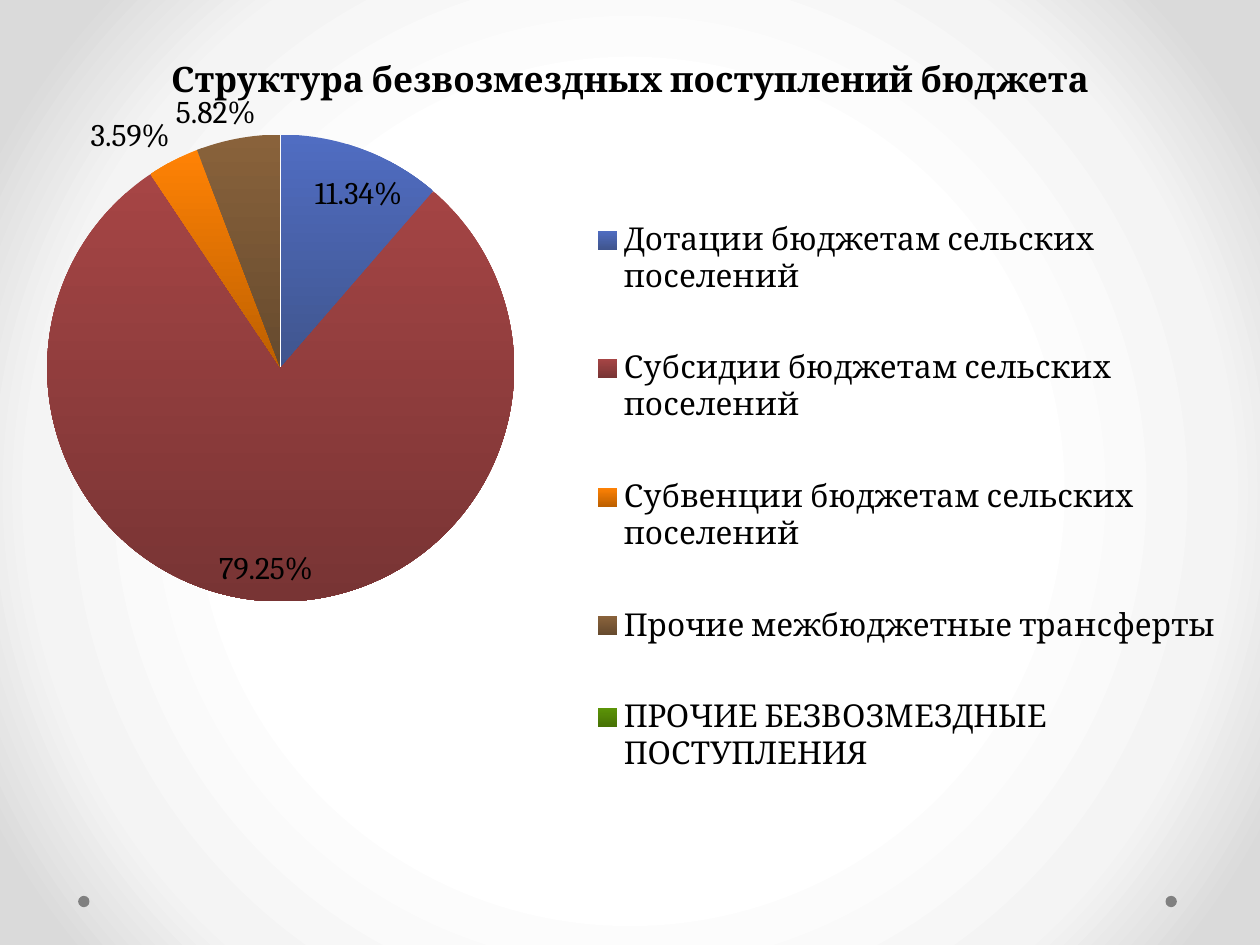
"""Build a slide with a pie chart of the budget's gratuitous receipts."""
from lxml import etree
from pptx import Presentation
from pptx.chart.data import CategoryChartData
from pptx.dml.color import RGBColor
from pptx.enum.chart import XL_CHART_TYPE, XL_LABEL_POSITION, XL_LEGEND_POSITION
from pptx.enum.shapes import MSO_SHAPE
from pptx.enum.text import MSO_ANCHOR, PP_ALIGN
from pptx.oxml import parse_xml
from pptx.oxml.ns import qn
from pptx.util import Inches, Pt

TITLE = "Структура безвозмездных поступлений бюджета"
RECEIPTS = [
    ("Дотации бюджетам сельских поселений", 11.34, "506DC2", "40558E"),
    ("Субсидии бюджетам сельских поселений", 79.25, "A64545", "783434"),
    ("Субвенции бюджетам сельских поселений", 3.59, "FF8205", "BD6000"),
    ("Прочие межбюджетные трансферты", 5.82, "89623B", "664A2E"),
    ("ПРОЧИЕ БЕЗВОЗМЕЗДНЫЕ ПОСТУПЛЕНИЯ", 0, "5C9408", "477205"),
]
BACKGROUND_STOPS = [(50, "FFFFFF"), (76, "F4F4F4"), (92, "DADADA")]
PLOT_AREA = (0.013, 0.07, 0.425, 0.554)
LEGEND_AREA = (0.471, 0.108, 0.515, 0.784)
DOT_LEFTS = (0.62, 9.25)
FONT = "Cambria"
BLACK = RGBColor(0, 0, 0)
GRAY = RGBColor(0x80, 0x80, 0x80)
DRAWING_NS = "http://schemas.openxmlformats.org/drawingml/2006/main"


def set_background(slide):
    fill = slide.background.fill
    fill.solid()
    fill.fore_color.rgb = RGBColor(255, 255, 255)
    stops = "".join(
        f'<a:gs pos="{position * 1000}"><a:srgbClr val="{color}"/></a:gs>'
        for position, color in BACKGROUND_STOPS
    )
    gradient = parse_xml(
        f'<a:gradFill xmlns:a="{DRAWING_NS}" rotWithShape="1"><a:gsLst>{stops}</a:gsLst>'
        '<a:path path="circle"><a:fillToRect l="50000" t="52000" r="50000" b="48000"/>'
        "</a:path></a:gradFill>"
    )
    solid = next(slide.element.iter(qn("a:solidFill")))
    solid.getparent().replace(solid, gradient)


def add_dot(slide, left):
    dot = slide.shapes.add_shape(
        MSO_SHAPE.OVAL, Inches(left), Inches(7.11), Inches(0.09), Inches(0.09)
    )
    dot.shadow.inherit = False
    dot.fill.solid()
    dot.fill.fore_color.rgb = GRAY
    dot.line.fill.background()


def set_title(slide):
    title = slide.shapes.title
    title.left, title.top, title.width, title.height = map(Inches, (0.5, 0, 9, 0.84))
    title.text_frame.text = TITLE
    title.text_frame.vertical_anchor = MSO_ANCHOR.BOTTOM
    paragraph = title.text_frame.paragraphs[0]
    paragraph.alignment = PP_ALIGN.CENTER
    paragraph.line_spacing = Pt(58)
    set_font(paragraph.runs[0].font, 20)
    paragraph.runs[0].font.bold = True


def set_font(font, size):
    font.name, font.size = FONT, Pt(size)
    font.color.rgb = BLACK


def make_layout(area, inner=False):
    layout = etree.Element(qn("c:layout"))
    manual = etree.SubElement(layout, qn("c:manualLayout"))
    settings = [("layoutTarget", "inner")] if inner else []
    settings += [("xMode", "edge"), ("yMode", "edge")]
    settings += zip("xywh", area)
    for name, value in settings:
        etree.SubElement(manual, qn(f"c:{name}"), val=str(value))
    return layout


def add_pie(slide):
    data = CategoryChartData()
    data.categories = [name for name, *_ in RECEIPTS]
    data.add_series("Series 1", [value for _, value, *_ in RECEIPTS])
    chart = slide.shapes.add_chart(
        XL_CHART_TYPE.PIE, Inches(0), Inches(0.6), Inches(9.88), Inches(6.69), data
    ).chart
    chart.has_title = False
    set_font(chart.font, 18)

    chart.has_legend = True
    legend = chart.legend
    legend.position = XL_LEGEND_POSITION.RIGHT
    legend.include_in_layout = False
    set_font(legend.font, 18)
    legend_element = chart.element.find(".//" + qn("c:legend"))
    plot_area = chart.element.find(".//" + qn("c:plotArea"))
    for parent in (legend_element, plot_area):
        for layout in parent.findall(qn("c:layout")):
            parent.remove(layout)
    legend_element.insert(1, make_layout(LEGEND_AREA))
    plot_area.insert(0, make_layout(PLOT_AREA, inner=True))

    series = chart.plots[0].series[0]
    for index, (_, _, top_color, bottom_color) in enumerate(RECEIPTS):
        slice_format = series.points[index].format
        slice_format.line.fill.background()
        fill = slice_format.fill
        fill.gradient()
        fill.gradient_angle = 270
        for stop, color in zip(fill.gradient_stops, (top_color, bottom_color)):
            stop.color.rgb = RGBColor.from_string(color)

    labels = series.data_labels
    labels.show_value = False
    labels.show_percentage = True
    labels.number_format = "0.00%"
    labels.number_format_is_linked = False
    labels.position = XL_LABEL_POSITION.BEST_FIT
    set_font(labels.font, 18)
    labels_element = chart.element.find(".//" + qn("c:ser")).find(qn("c:dLbls"))
    for index, (_, value, *_) in enumerate(RECEIPTS):
        if value == 0:
            hidden = etree.Element(qn("c:dLbl"))
            etree.SubElement(hidden, qn("c:idx"), val=str(index))
            etree.SubElement(hidden, qn("c:delete"), val="1")
            labels_element.insert(0, hidden)


def main():
    presentation = Presentation()
    presentation.slide_width, presentation.slide_height = Inches(10), Inches(7.5)
    slide = presentation.slides.add_slide(presentation.slide_layouts[5])
    set_background(slide)
    for left in DOT_LEFTS:
        add_dot(slide, left)
    set_title(slide)
    add_pie(slide)
    presentation.save("out.pptx")


if __name__ == "__main__":
    main()
